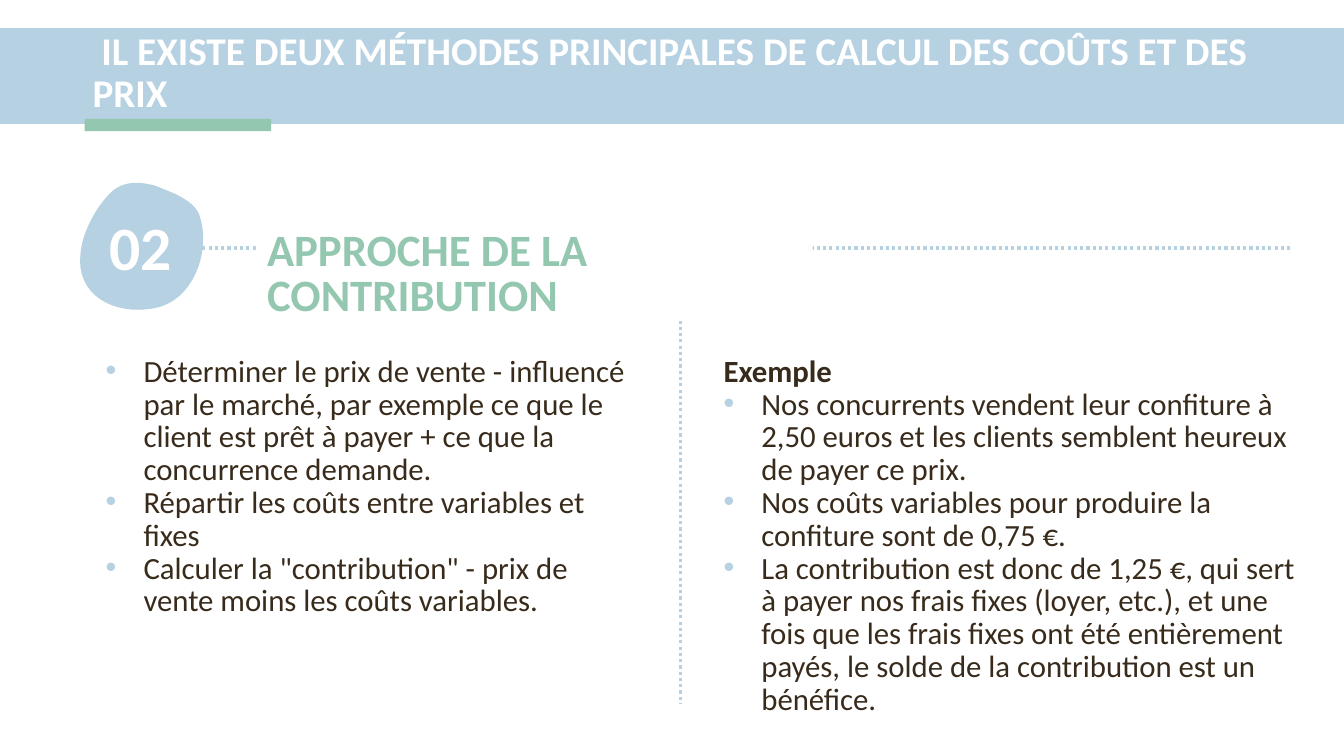
from lxml.etree import SubElement
from pptx import Presentation
from pptx.dml.color import RGBColor
from pptx.enum.dml import MSO_LINE
from pptx.enum.shapes import MSO_CONNECTOR, MSO_SHAPE
from pptx.enum.text import MSO_ANCHOR, PP_ALIGN
from pptx.oxml.ns import qn
from pptx.util import Inches, Pt

BLUE, GREEN, BROWN, WHITE = "B6D1E1", "94C7B0", "382B1B", "FFFFFF"
hex_color = RGBColor.from_string

deck = Presentation()
deck.slide_width, deck.slide_height = Inches(13.333), Inches(7.5)
page = deck.slides.add_slide(deck.slide_layouts[6])


def area(*shares):
    """Turn alternating percentages of slide width and height into lengths."""
    sides = (deck.slide_width, deck.slide_height)
    return [round(share * sides[i % 2] / 100) for i, share in enumerate(shares)]


def write(box, text, size=22, color=BROWN, bold=False, bullet=False,
          spacing=Pt(23.4), align=PP_ALIGN.LEFT, anchor=MSO_ANCHOR.TOP):
    """Add one paragraph, filling the empty first one if there is one."""
    frame = box.text_frame
    frame.word_wrap = True
    frame.vertical_anchor = anchor
    para = frame.add_paragraph() if frame.text else frame.paragraphs[0]
    if bullet:
        properties = para._p.get_or_add_pPr()
        properties.set("marL", str(Inches(0.375)))
        properties.set("indent", str(-Inches(0.375)))
        bullet_color = SubElement(properties, qn("a:buClr"))
        SubElement(bullet_color, qn("a:srgbClr"), val=BLUE)
        SubElement(properties, qn("a:buFont"), typeface="Arial")
        SubElement(properties, qn("a:buChar"), char="•")
    para.alignment = align
    para.line_spacing = spacing
    span = para.add_run()
    span.text = text
    span.font.name = "Calibri"
    span.font.size = Pt(size)
    span.font.bold = bold
    span.font.color.rgb = hex_color(color)


# Title band and its green accent
for shares, color in (((0, 3.73, 100, 12.67), BLUE),
                      ((6.3, 15.73, 13.88, 1.6), GREEN)):
    strip = page.shapes.add_shape(MSO_SHAPE.RECTANGLE, *area(*shares))
    strip.shadow.inherit = False
    strip.fill.solid()
    strip.fill.fore_color.rgb = hex_color(color)
    strip.line.fill.background()

title = page.shapes.add_textbox(*area(6.15, 4.53, 89.48, 10.53))
write(title, " IL EXISTE DEUX MÉTHODES PRINCIPALES DE CALCUL DES COÛTS ET DES PRIX",
      size=28, color=WHITE, bold=True, spacing=0.9, anchor=MSO_ANCHOR.MIDDLE)

# Dotted rules: across the heading, and between the columns
for ends in ((96, 32.8, 6.75, 32.8), (50.63, 42.4, 50.63, 93.07)):
    rule = page.shapes.add_connector(MSO_CONNECTOR.STRAIGHT, *area(*ends))
    rule.line.color.rgb = hex_color(BLUE)
    rule.line.width = Pt(2.25)
    rule.line.dash_style = MSO_LINE.ROUND_DOT
    SubElement(rule._element.spPr, qn("a:effectLst"))

heading = page.shapes.add_shape(MSO_SHAPE.RECTANGLE, *area(19.13, 29.73, 41.33, 6.4))
heading.shadow.inherit = False
heading.fill.solid()
heading.fill.fore_color.rgb = hex_color(WHITE)
heading.line.fill.background()
write(heading, "APPROCHE DE LA CONTRIBUTION", size=32, color=GREEN, bold=True,
      spacing=Pt(32.4))

# Two columns of text
steps = page.shapes.add_textbox(*area(7.13, 46.4, 40.95, 48.4))
example = page.shapes.add_textbox(*area(53.1, 46.4, 45.45, 48.4))
write(example, "Exemple", bold=True)
for box, items in (
    (steps, (
        "Déterminer le prix de vente - influencé par le marché, par exemple "
        "ce que le client est prêt à payer + ce que la concurrence demande.",
        "Répartir les coûts entre variables et fixes",
        'Calculer la "contribution" - prix de vente moins les coûts variables.',
    )),
    (example, (
        "Nos concurrents vendent leur confiture à 2,50 euros et les clients "
        "semblent heureux de payer ce prix.",
        "Nos coûts variables pour produire la confiture sont de 0,75 €.",
        "La contribution est donc de 1,25 €, qui sert à payer nos frais fixes "
        "(loyer, etc.), et une fois que les frais fixes ont été entièrement "
        "payés, le solde de la contribution est un bénéfice.",
    )),
):
    for item in items:
        write(box, item, bullet=True)

# Numbered badge: each curve holds two control points and an end point
start = (11.48, 24.53)
curves = (
    ((10.28, 24), (9, 23.87), (8.03, 25.87)),
    ((7.05, 27.73), (6.15, 30.8), (6, 33.33)),
    ((5.55, 39.07), (8.48, 41.73), (11.4, 40.8)),
    ((14.33, 40), (15.75, 33.33), (14.85, 28.53)),
    ((14.55, 27.07), (13.8, 26.4), (13.13, 25.73)),
    ((12.6, 25.33), (12.08, 24.93), start),
)
STEPS = 16
outline = [start]
for first, second, end in curves:
    origin = outline[-1]
    for step in range(1, STEPS + 1):
        t = step / STEPS
        outline.append(tuple(
            a * (1 - t) ** 3 + 3 * b * t * (1 - t) ** 2 + 3 * c * t ** 2 * (1 - t) + d * t ** 3
            for a, b, c, d in zip(origin, first, second, end)))
points = [area(*point) for point in outline]

badge = page.shapes.add_group_shape()
builder = badge.shapes.build_freeform(*points[0])
builder.add_line_segments(points[1:], close=True)
blob = builder.convert_to_shape()
blob.shadow.inherit = False
blob.fill.solid()
blob.fill.fore_color.rgb = hex_color(BLUE)
blob.line.fill.background()
number = badge.shapes.add_textbox(*area(5.93, 32.4, 9.08, 13.47))
write(number, "02", size=44, color=WHITE, bold=True, align=PP_ALIGN.CENTER)

deck.save("out.pptx")
